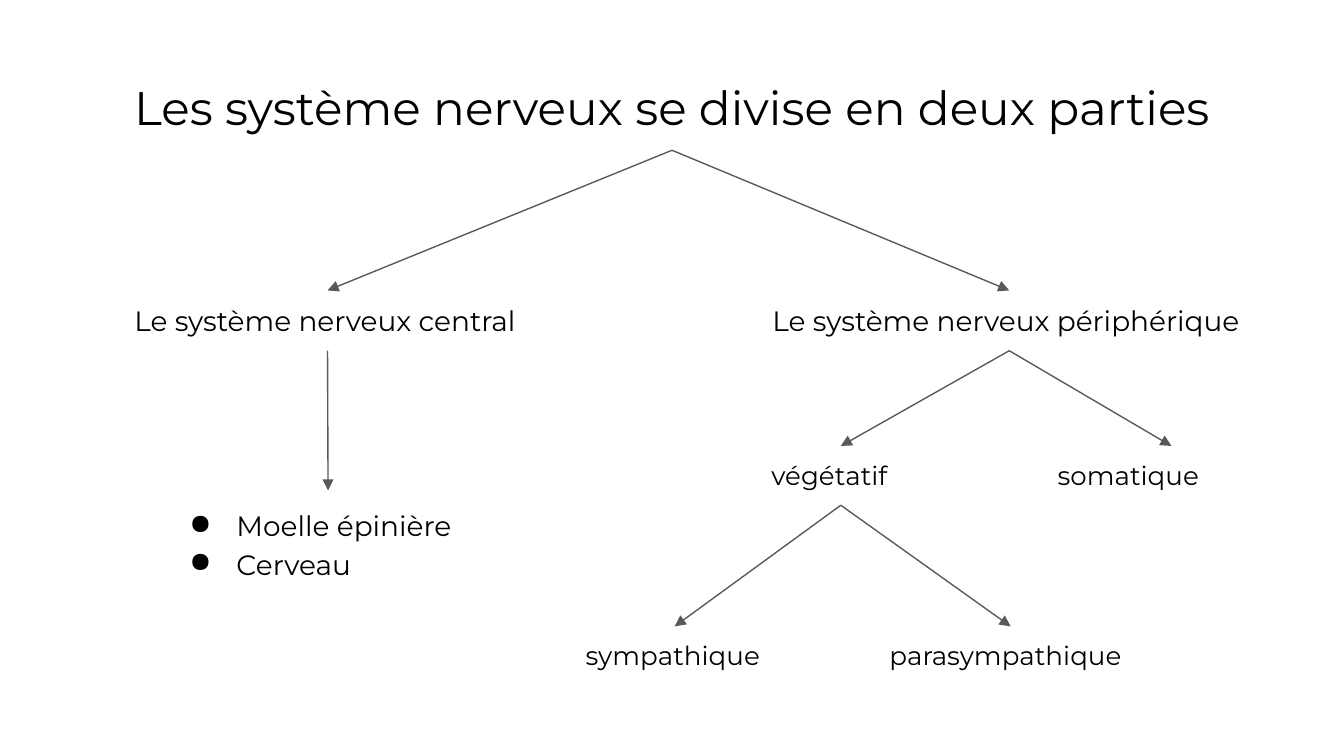
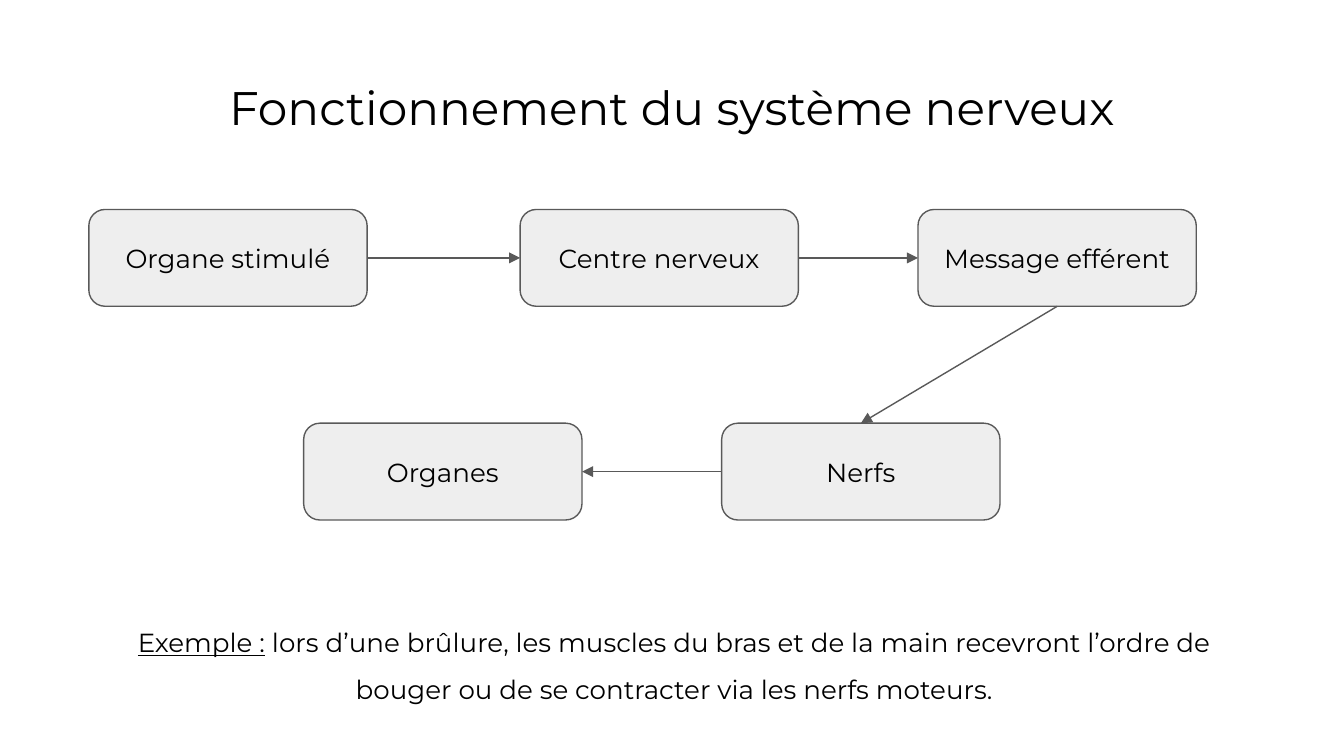
from dataclasses import dataclass
from typing import Any

from lxml import etree
from pptx import Presentation
from pptx import util as u
from pptx.dml.color import RGBColor
from pptx.enum import shapes, text
from pptx.oxml import ns

BLACK = RGBColor(0x00, 0x00, 0x00)
GREY = RGBColor(0x59, 0x59, 0x59)
PALE = RGBColor(0xEE, 0xEE, 0xEE)

FONT = "Montserrat"
BOX_W, BOX_H = 5.26, 1.83
TOP, LEFT, BOTTOM, RIGHT = range(4)

FRAME = {
    "word_wrap": True,
    "margin_left": u.Cm(0.25),
    "margin_right": u.Cm(0.25),
    "margin_top": u.Cm(0.25),
    "margin_bottom": u.Cm(0.25),
}
GROWING = {**FRAME, "auto_size": text.MSO_AUTO_SIZE.SHAPE_TO_FIT_TEXT}
CENTRED = {**FRAME, "vertical_anchor": text.MSO_ANCHOR.MIDDLE}


@dataclass(frozen=True)
class Label:
    key: str
    lines: tuple[str, ...]
    x: float
    y: float
    w: float
    h: float
    size: float = 14
    align: text.PP_ALIGN = text.PP_ALIGN.LEFT
    spacing: float = 1.0
    bullet: str = ""
    lead: str = ""


@dataclass(frozen=True)
class Step:
    key: str
    words: str
    x: float
    y: float


@dataclass(frozen=True)
class Arrow:
    start: str
    end: str
    start_side: int = BOTTOM
    end_side: int = TOP


TREE = (
    Label("central", ("Le système nerveux central",), 2.29, 5.49, 7.8, 1.14, 15),
    Label("périphérique", ("Le système nerveux périphérique",), 14.35, 5.49, 9.45, 1.14, 15),
    Label("organes", ("Moelle épinière", "Cerveau"), 2.95, 9.27, 6.5, 1.88, 15,
          spacing=1.15, bullet="●"),
    Label("somatique", ("somatique",), 19.74, 8.43, 4.8, 1.12),
    Label("végétatif", ("végétatif",), 14.33, 8.43, 3.12, 1.12),
    Label("sympathique", ("sympathique",), 10.82, 11.84, 3.86, 1.12),
    Label("parasympathique", ("parasympathique",), 16.56, 11.84, 5.08, 1.12),
)
BRANCHES = (
    Arrow("title", "central"),
    Arrow("title", "périphérique"),
    Arrow("central", "organes"),
    Arrow("périphérique", "végétatif"),
    Arrow("périphérique", "somatique"),
    Arrow("végétatif", "sympathique"),
    Arrow("végétatif", "parasympathique"),
)

STEPS = (
    Step("organe", "Organe stimulé", 1.68, 3.96),
    Step("centre", "Centre nerveux", 9.83, 3.96),
    Step("message", "Message efférent", 17.35, 3.96),
    Step("nerfs", "Nerfs", 13.64, 8),
    Step("organes", "Organes", 5.74, 8),
)
FLOW = (
    Arrow("organe", "centre", RIGHT, LEFT),
    Arrow("centre", "message", RIGHT, LEFT),
    Arrow("message", "nerfs"),
    Arrow("nerfs", "organes", LEFT, RIGHT),
)
EXAMPLE = Label(
    "exemple",
    (" lors d’une brûlure, les muscles du bras et de la main recevront l’ordre de "
     "bouger ou de se contracter via les nerfs moteurs.",),
    2.08, 11.3, 21.34, 2.01,
    align=text.PP_ALIGN.CENTER, spacing=1.5, lead="Exemple :",
)


def apply(target: Any, values: dict[str, Any]) -> None:
    for name, value in values.items():
        setattr(target, name, value)


def add_run(p: Any, words: str, size: float, underline: bool = False) -> None:
    r = p.add_run()
    r.text = words
    apply(r.font, {"name": FONT, "size": u.Pt(size), "underline": underline})
    r.font.color.rgb = BLACK


def add_bullet(p: Any, char: str) -> None:
    pPr = p._p.get_or_add_pPr()
    pPr.set("marL", str(u.Cm(1.27)))
    pPr.set("indent", str(-u.Cm(0.89)))
    clr = etree.SubElement(pPr, ns.qn("a:buClr"))
    etree.SubElement(clr, ns.qn("a:srgbClr"), val=str(BLACK))
    etree.SubElement(pPr, ns.qn("a:buChar"), char=char)


def add_label(s: Any, label: Label) -> Any:
    sp = s.shapes.add_textbox(*map(u.Cm, (label.x, label.y, label.w, label.h)))
    tf = sp.text_frame
    apply(tf, GROWING)
    for i, line in enumerate(label.lines):
        p = tf.add_paragraph() if i else tf.paragraphs[0]
        apply(p, {"alignment": label.align, "line_spacing": label.spacing})
        if label.bullet:
            add_bullet(p, label.bullet)
        if label.lead:
            add_run(p, label.lead, label.size, underline=True)
        add_run(p, line, label.size)
    return sp


def add_title(s: Any, words: str) -> Any:
    return add_label(s, Label("title", (words,), 0.86, 1.24, 23.68, 1.6, 25.2,
                              text.PP_ALIGN.CENTER))


def style_line(line: Any) -> None:
    line.color.rgb = GREY
    line.width = u.Pt(0.75)


def add_step(s: Any, step: Step) -> Any:
    sp = s.shapes.add_shape(shapes.MSO_SHAPE.ROUNDED_RECTANGLE,
                            *map(u.Cm, (step.x, step.y, BOX_W, BOX_H)))
    sp.shadow.inherit = False
    sp.fill.solid()
    sp.fill.fore_color.rgb = PALE
    style_line(sp.line)
    tf = sp.text_frame
    apply(tf, CENTRED)
    p = tf.paragraphs[0]
    p.alignment = text.PP_ALIGN.CENTER
    add_run(p, step.words, 14)
    return sp


def add_arrow(s: Any, arrow: Arrow, nodes: dict[str, Any]) -> None:
    cxn = s.shapes.add_connector(shapes.MSO_CONNECTOR.STRAIGHT, 0, 0, 0, 0)
    cxn.begin_connect(nodes[arrow.start], arrow.start_side)
    cxn.end_connect(nodes[arrow.end], arrow.end_side)
    style_line(cxn.line)
    spPr = cxn._element.spPr
    etree.SubElement(spPr.find(ns.qn("a:ln")), ns.qn("a:tailEnd"), type="triangle")
    etree.SubElement(spPr, ns.qn("a:effectLst"))


def build_divisions(s: Any) -> None:
    nodes = {"title": add_title(s, "Les système nerveux se divise en deux parties")}
    nodes |= {label.key: add_label(s, label) for label in TREE}
    for arrow in BRANCHES:
        add_arrow(s, arrow, nodes)


def build_functioning(s: Any) -> None:
    add_title(s, "Fonctionnement du système nerveux")
    nodes = {step.key: add_step(s, step) for step in STEPS}
    for arrow in FLOW:
        add_arrow(s, arrow, nodes)
    add_label(s, EXAMPLE)


def main() -> None:
    prs = Presentation()
    apply(prs, {"slide_width": u.Cm(25.4), "slide_height": u.Cm(14.29)})
    for build in (build_divisions, build_functioning):
        build(prs.slides.add_slide(prs.slide_layouts[6]))
    prs.save("out.pptx")


if __name__ == "__main__":
    main()
